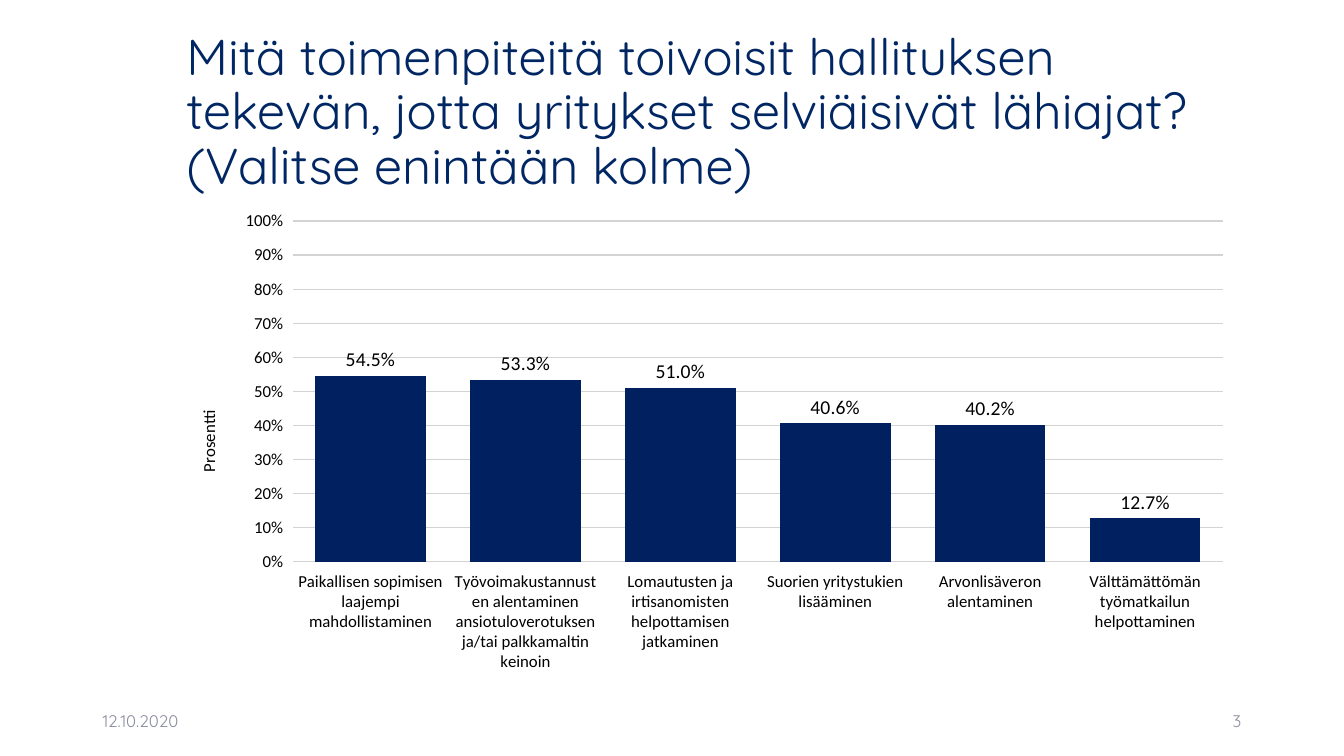
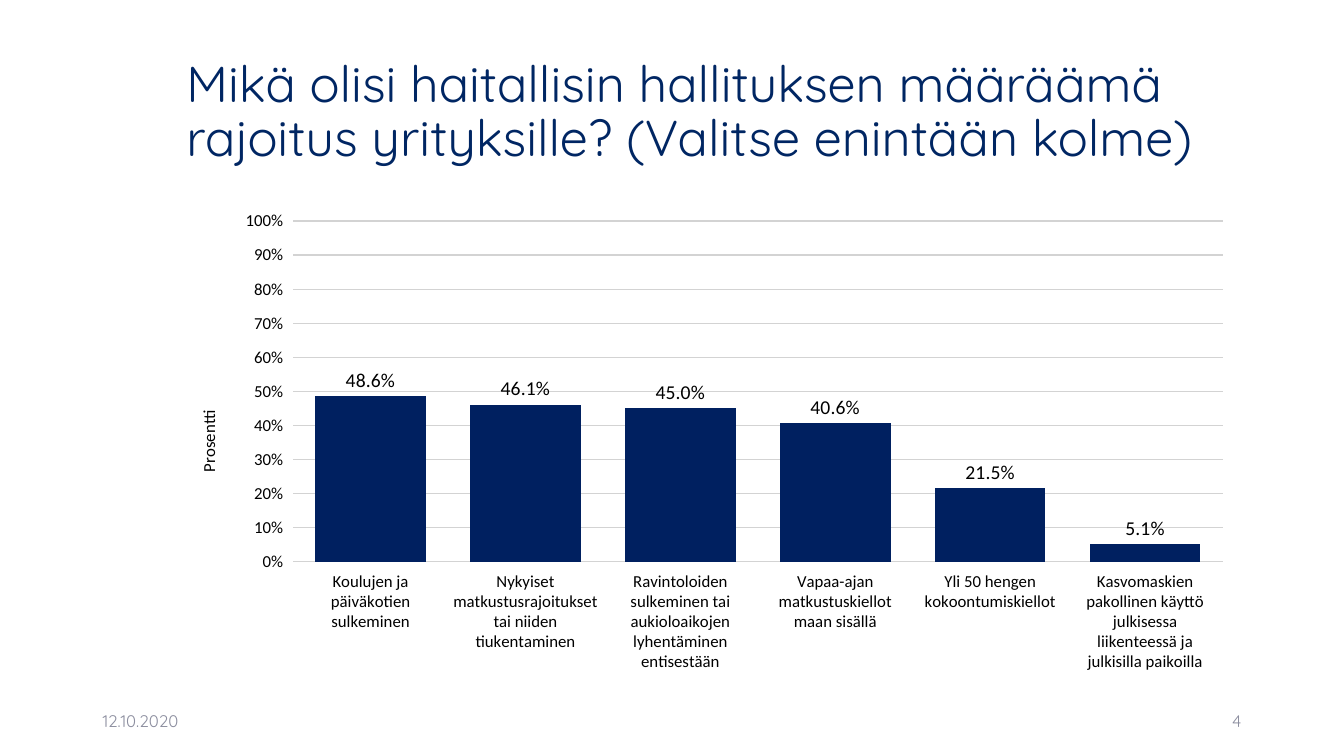
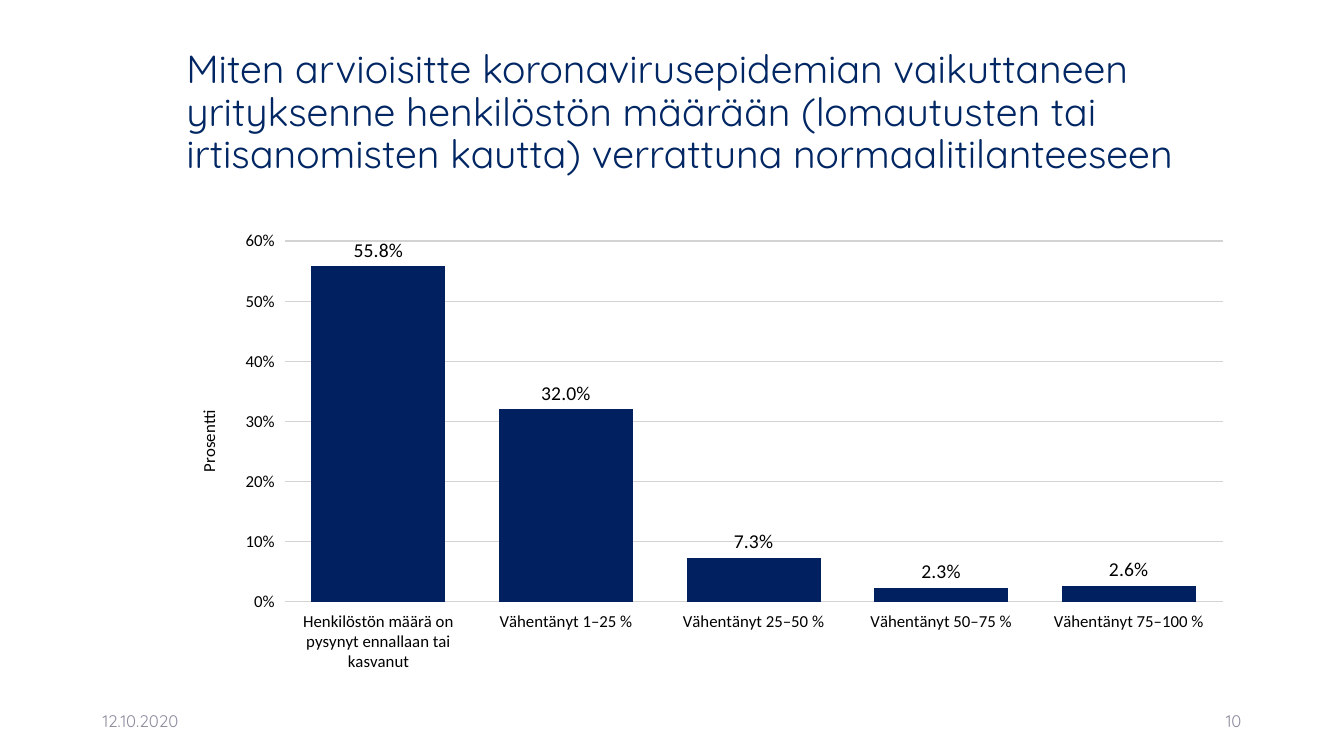
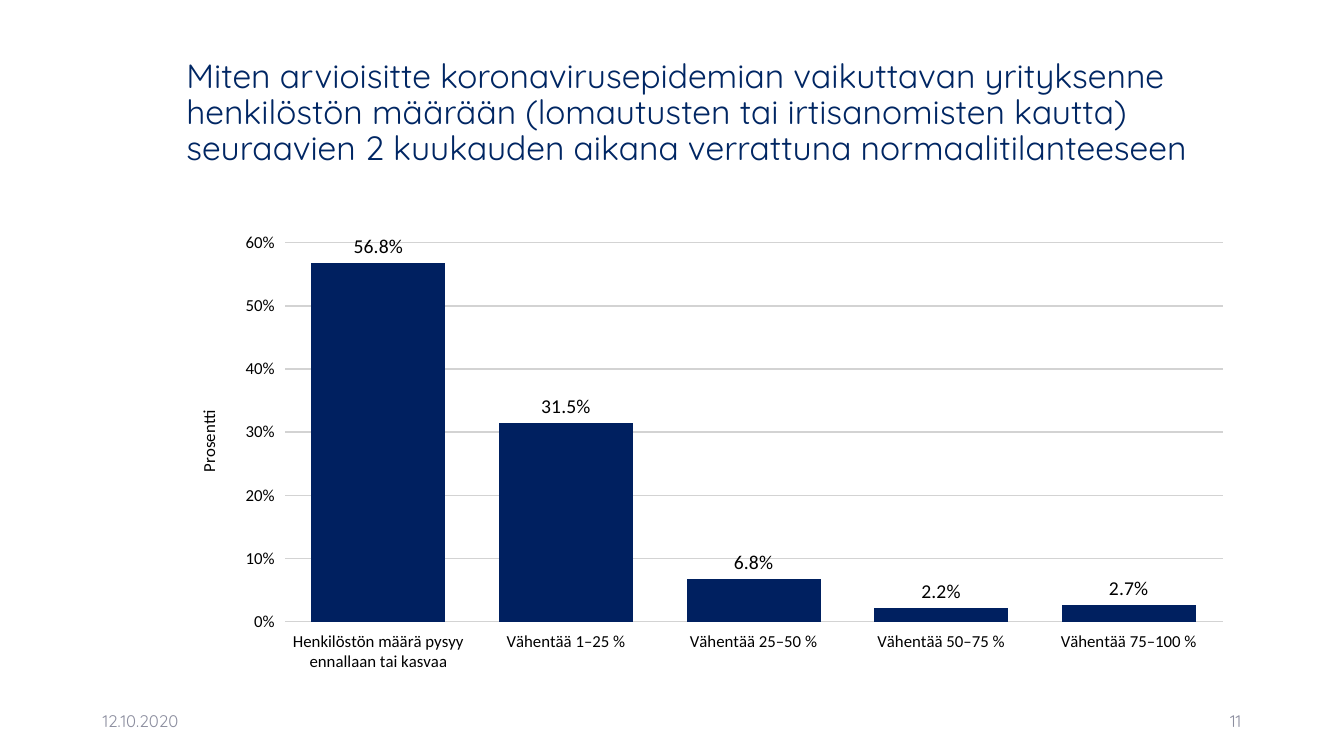
from dataclasses import dataclass

from pptx import Presentation
from pptx.chart.data import CategoryChartData
from pptx.dml.color import RGBColor
from pptx.enum.chart import XL_CHART_TYPE, XL_LABEL_POSITION, XL_TICK_MARK
from pptx.enum.text import MSO_ANCHOR, PP_ALIGN
from pptx.oxml.ns import qn
from pptx.util import Pt

COLUMNS = XL_CHART_TYPE.COLUMN_CLUSTERED
OUTSIDE_END = XL_LABEL_POSITION.OUTSIDE_END
TICK_OUTSIDE = XL_TICK_MARK.OUTSIDE
MIDDLE = MSO_ANCHOR.MIDDLE
LEFT, RIGHT = PP_ALIGN.LEFT, PP_ALIGN.RIGHT

SLIDE_WIDTH, SLIDE_HEIGHT = 960, 540
BLANK_LAYOUT = 6


@dataclass(frozen=True)
class Theme:
    """Colours, fonts and type sizes shared by every slide."""
    title_color: str = "002663"
    footer_color: str = "8C8E9F"
    chart_text: str = "000000"
    column_color: str = "002060"
    grid_color: str = "D3D3D3"
    text_font: str = "Quicksand"
    chart_font: str = "Calibri"
    footer_size: int = 12
    chart_size: int = 11
    axis_size: int = 12
    label_size: int = 14
    grid_width: int = 1
    column_gap: int = 40


THEME = Theme()

# Shared places: left, top, width, height in points
CONTENT_LEFT, CONTENT_WIDTH = 126, 762.5
TITLE_BOX = (CONTENT_LEFT, 28.8, CONTENT_WIDTH, 104.4)
CHART_BOX = (CONTENT_LEFT, 144, CONTENT_WIDTH, 342.5)
FOOTER_MARGIN, FOOTER_TOP, FOOTER_WIDTH, FOOTER_HEIGHT = 66.2, 500.4, 216, 28.8
DATE_BOX = (FOOTER_MARGIN, FOOTER_TOP, FOOTER_WIDTH, FOOTER_HEIGHT)
NUMBER_BOX = (SLIDE_WIDTH - FOOTER_MARGIN - FOOTER_WIDTH, FOOTER_TOP,
              FOOTER_WIDTH, FOOTER_HEIGHT)

SURVEY_DATE = "12.10.2020"
VALUE_AXIS_TITLE = "Prosentti"

# Each slide: page number, title, title size, axis maximum, answers and shares
SURVEY_SLIDES = [
    dict(
        number=3,
        title="Mitä toimenpiteitä toivoisit hallituksen tekevän, jotta yritykset "
              "selviäisivät lähiajat? (Valitse enintään kolme)",
        title_size=36,
        maximum=1,
        answers={
            "Paikallisen sopimisen laajempi mahdollistaminen": 0.545,
            "Työvoimakustannusten alentaminen ansiotuloverotuksen "
            "ja/tai palkkamaltin keinoin": 0.533,
            "Lomautusten ja irtisanomisten helpottamisen jatkaminen": 0.51,
            "Suorien yritystukien lisääminen": 0.406,
            "Arvonlisäveron alentaminen": 0.402,
            "Välttämättömän työmatkailun helpottaminen": 0.127,
        },
    ),
    dict(
        number=4,
        title="Mikä olisi haitallisin hallituksen määräämä rajoitus yrityksille? "
              "(Valitse enintään kolme)",
        title_size=36,
        maximum=1,
        answers={
            "Koulujen ja päiväkotien sulkeminen": 0.486,
            "Nykyiset matkustusrajoitukset tai niiden tiukentaminen": 0.461,
            "Ravintoloiden sulkeminen tai aukioloaikojen lyhentäminen "
            "entisestään": 0.45,
            "Vapaa-ajan matkustuskiellot maan sisällä": 0.406,
            "Yli 50 hengen kokoontumiskiellot": 0.215,
            "Kasvomaskien pakollinen käyttö julkisessa liikenteessä ja "
            "julkisilla paikoilla": 0.051,
        },
    ),
    dict(
        number=10,
        title="Miten arvioisitte koronavirusepidemian vaikuttaneen yrityksenne "
              "henkilöstön määrään (lomautusten tai irtisanomisten kautta) "
              "verrattuna normaalitilanteeseen",
        title_size=28,
        maximum=0.65,
        answers={
            "Henkilöstön määrä on pysynyt ennallaan tai kasvanut": 0.558,
            "Vähentänyt 1–25 %": 0.32,
            "Vähentänyt 25–50 %": 0.073,
            "Vähentänyt 50–75 %": 0.023,
            "Vähentänyt 75–100 %": 0.026,
        },
    ),
    dict(
        number=11,
        title="Miten arvioisitte koronavirusepidemian vaikuttavan yrityksenne "
              "henkilöstön määrään (lomautusten tai irtisanomisten kautta) "
              "seuraavien 2 kuukauden aikana verrattuna normaalitilanteeseen",
        title_size=24,
        maximum=0.65,
        answers={
            "Henkilöstön määrä pysyy ennallaan tai kasvaa": 0.568,
            "Vähentää 1–25 %": 0.315,
            "Vähentää 25–50 %": 0.068,
            "Vähentää 50–75 %": 0.022,
            "Vähentää 75–100 %": 0.027,
        },
    ),
]


def set_attributes(target, values):
    for name, value in values.items():
        setattr(target, name, value)


def in_points(box):
    return [Pt(length) for length in box]


def style_font(font, name, size, color):
    set_attributes(font, dict(name=name, size=Pt(size), bold=False))
    font.color.rgb = RGBColor.from_string(color)


def style_chart_font(font, size):
    style_font(font, THEME.chart_font, size, THEME.chart_text)


def add_text(slide, box, text, size, color, alignment=LEFT, line_spacing=1.0):
    frame = slide.shapes.add_textbox(*in_points(box)).text_frame
    set_attributes(frame, dict(word_wrap=True, vertical_anchor=MIDDLE))
    paragraph = frame.paragraphs[0]
    set_attributes(paragraph, dict(alignment=alignment, line_spacing=line_spacing))
    run = paragraph.add_run()
    run.text = text
    style_font(run.font, THEME.text_font, size, color)


def add_footer(slide, number):
    for box, text, alignment in ((DATE_BOX, SURVEY_DATE, LEFT),
                                 (NUMBER_BOX, str(number), RIGHT)):
        add_text(slide, box, text, THEME.footer_size, THEME.footer_color, alignment)


def style_axis(axis):
    axis.major_tick_mark = TICK_OUTSIDE
    axis.format.line.fill.background()
    style_chart_font(axis.tick_labels.font, THEME.axis_size)
    # Level labels, so that long answers wrap instead of turning
    body = axis._element.find(qn("c:txPr")).find(qn("a:bodyPr"))
    for name, value in dict(rot="0", vert="horz").items():
        body.set(name, value)


def style_value_axis(axis, maximum):
    set_attributes(axis, dict(minimum_scale=0, maximum_scale=maximum,
                              major_unit=0.1, has_major_gridlines=True))
    set_attributes(axis.tick_labels,
                   dict(number_format="0%", number_format_is_linked=False))
    grid_line = axis.major_gridlines.format.line
    grid_line.width = Pt(THEME.grid_width)
    grid_line.color.rgb = RGBColor.from_string(THEME.grid_color)
    # Axis title
    run = axis.axis_title.text_frame.paragraphs[0].add_run()
    run.text = VALUE_AXIS_TITLE
    style_chart_font(run.font, THEME.axis_size)


def add_column_chart(slide, answers, maximum):
    data = CategoryChartData(number_format="0.0%")
    data.categories = list(answers)
    data.add_series("Series 1", list(answers.values()))
    chart = slide.shapes.add_chart(COLUMNS, *in_points(CHART_BOX), data).chart
    set_attributes(chart, dict(has_legend=False, has_title=False))
    style_chart_font(chart.font, THEME.chart_size)

    # Axes
    for axis in (chart.category_axis, chart.value_axis):
        style_axis(axis)
    style_value_axis(chart.value_axis, maximum)

    # Columns and their labels
    plot = chart.plots[0]
    set_attributes(plot, dict(gap_width=THEME.column_gap, vary_by_categories=False,
                              has_data_labels=True))
    fill = plot.series[0].format.fill
    fill.solid()
    fill.fore_color.rgb = RGBColor.from_string(THEME.column_color)
    labels = plot.data_labels
    set_attributes(labels, dict(show_value=True, position=OUTSIDE_END,
                                number_format="0.0%",
                                number_format_is_linked=False))
    style_chart_font(labels.font, THEME.label_size)


def add_survey_slide(presentation, number, title, title_size, maximum, answers):
    slide = presentation.slides.add_slide(presentation.slide_layouts[BLANK_LAYOUT])
    add_text(slide, TITLE_BOX, title, title_size, THEME.title_color,
             line_spacing=0.9)
    add_footer(slide, number)
    add_column_chart(slide, answers, maximum)


def main():
    presentation = Presentation()
    set_attributes(presentation, dict(slide_width=Pt(SLIDE_WIDTH),
                                      slide_height=Pt(SLIDE_HEIGHT)))
    for content in SURVEY_SLIDES:
        add_survey_slide(presentation, **content)
    presentation.save("out.pptx")


if __name__ == "__main__":
    main()
